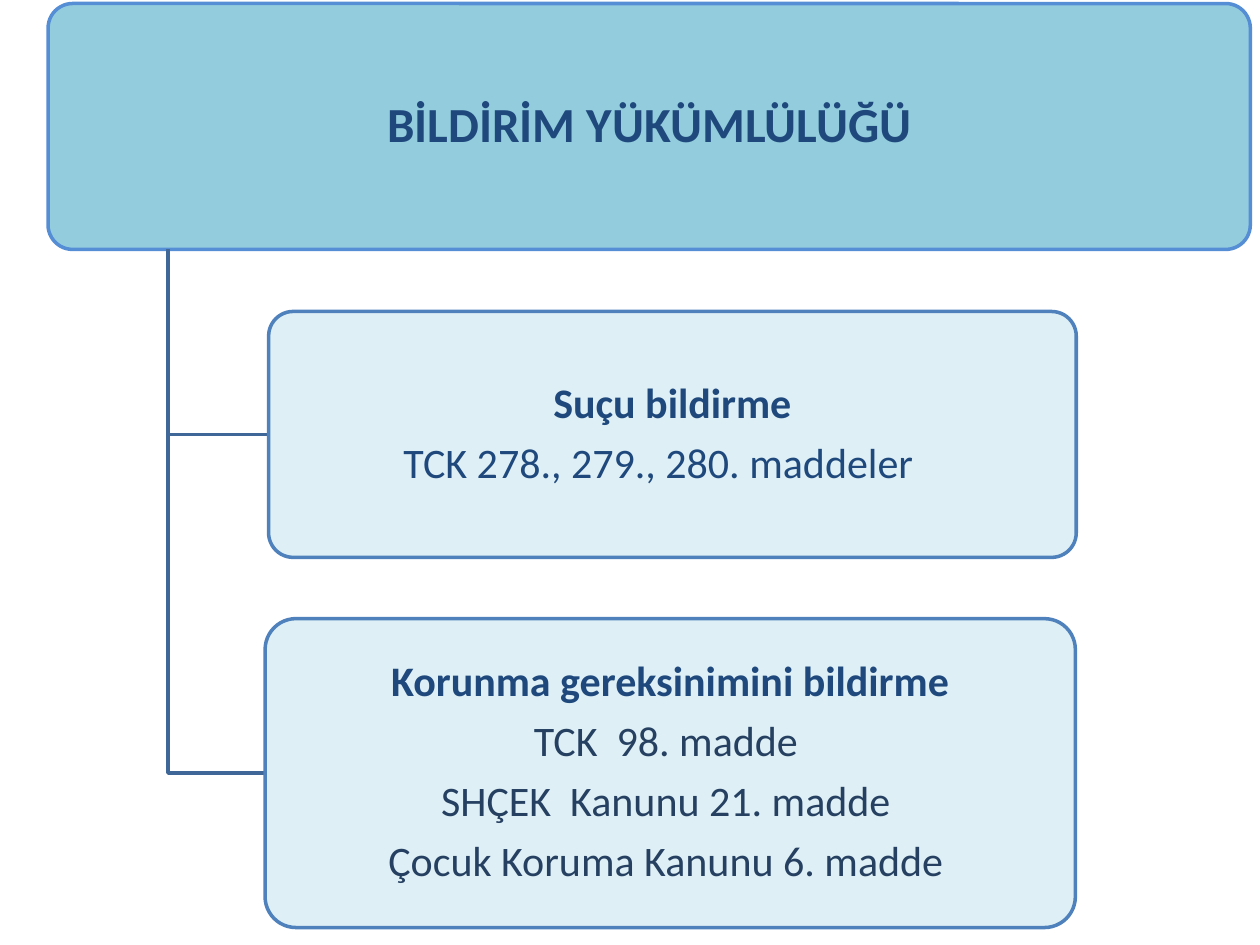
import pptx
import pptx.util
import pptx.dml.color
import pptx.enum.shapes
import pptx.enum.text
import pptx.oxml
import pptx.oxml.ns
from lxml import etree

Pt = pptx.util.Pt
qn = pptx.oxml.ns.qn
NAVY, DARK = "1F497D", "254061"


def rgb(value):
    return pptx.dml.color.RGBColor.from_string(value)


def write_lines(frame, lines, size, inset):
    """Fill a frame with centred (text, bold, colour, right margin) lines."""
    layout = {
        "word_wrap": True,
        "auto_size": pptx.enum.text.MSO_AUTO_SIZE.NONE,
        "vertical_anchor": pptx.enum.text.MSO_ANCHOR.MIDDLE,
        "margin_left": Pt(inset), "margin_right": Pt(inset),
        "margin_top": Pt(inset), "margin_bottom": Pt(inset),
    }
    for key, value in layout.items():
        setattr(frame, key, value)
    for index, (text, bold, colour, right_margin) in enumerate(lines):
        paragraph = frame.add_paragraph() if index else frame.paragraphs[0]
        paragraph.alignment = pptx.enum.text.PP_ALIGN.CENTER
        paragraph.line_spacing = 0.9
        paragraph.space_after = Pt(round(size * 0.35, 1))
        if right_margin:
            paragraph._p.get_or_add_pPr().set("marR", str(Pt(right_margin)))
        run = paragraph.add_run()
        run.text = text
        for key, value in {"name": "Calibri", "size": Pt(size), "bold": bold}.items():
            setattr(run.font, key, value)
        run.font.color.rgb = rgb(colour)


deck = pptx.Presentation()
deck.slide_width, deck.slide_height = Pt(720), Pt(540)
slide = deck.slides.add_slide(deck.slide_layouts[5])

# Header, with the title placeholder on top of it
header_box = (27.5, 2, 687, 140.5)
title = slide.shapes.title
title.left, title.top, title.width, title.height = map(Pt, header_box)
write_lines(title.text_frame, [("BİLDİRİM YÜKÜMLÜLÜĞÜ", True, NAVY, 0)], 28, 8)

duties = [
    ((153.5, 178, 461.5, 140.5), [
        ("Suçu bildirme", True, NAVY, 0),
        ("TCK 278., 279., 280. maddeler", False, NAVY, 16),
    ]),
    ((151.5, 353.5, 463, 176.5), [
        ("Korunma gereksinimini bildirme", True, NAVY, 0),
        ("TCK  98. madde", False, DARK, 5),
        ("SHÇEK  Kanunu 21. madde", False, DARK, 0),
        ("Çocuk Koruma Kanunu 6. madde", False, DARK, 0),
    ]),
]

# Branches run down from the header and turn right into each duty
trunk_x = 96
header_bottom = header_box[1] + header_box[3]
for (left, top, width, height), lines in duties:
    middle = top + height / 2
    builder = slide.shapes.build_freeform(Pt(trunk_x), Pt(header_bottom))
    builder.add_line_segments(
        [(Pt(trunk_x), Pt(middle)), (Pt(left), Pt(middle))], close=False)
    branch = builder.convert_to_shape()
    branch.shadow.inherit = False
    branch.fill.background()
    branch.line.color.rgb = rgb("3F6797")
    branch.line.width = Pt(2)

cards = [(header_box, [], "93CDDD", "558ED5")]
cards += [(box, lines, "DBEEF4", "4F81BD") for box, lines in duties]
for box, lines, fill, outline in cards:
    card = slide.shapes.add_shape(
        pptx.enum.shapes.MSO_SHAPE.ROUNDED_RECTANGLE, *map(Pt, box))
    card.adjustments[0] = 0.1
    card.shadow.inherit = False
    card.fill.solid()
    card.fill.fore_color.rgb = rgb(fill)
    card.line.color.rgb = rgb(outline)
    card.line.width = Pt(2)
    if lines:
        fill_colour = card.element.spPr.find(qn("a:solidFill")).find(qn("a:srgbClr"))
        etree.SubElement(fill_colour, qn("a:alpha")).set("val", "90000")
        write_lines(card.text_frame, lines, 24, 8)
    else:
        title.element.addprevious(card.element)

deck.save("out.pptx")
